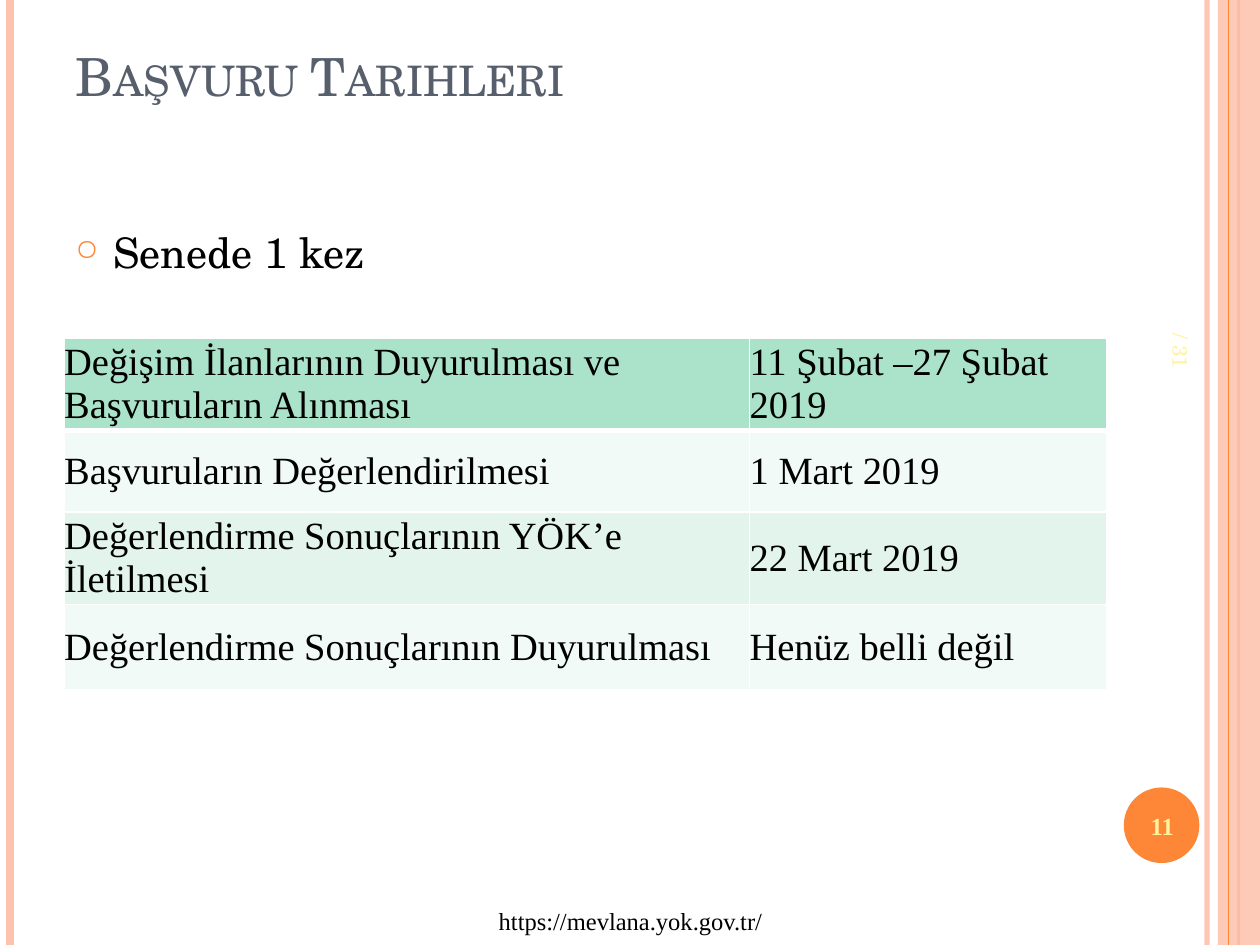
from lxml import etree
from pptx import Presentation
from pptx.dml.color import RGBColor
from pptx.enum import shapes as sh, text as tx
from pptx.oxml import ns
from pptx.util import Pt

SERIF, SCHOLA = "Times New Roman", "TeX Gyre Schola"
PEACH, ORANGE, CREAM, BLACK = "FEC3AE", "FE8637", "FFF39D", "000000"


def rgb(code):
    return RGBColor.from_string(code)


def style(frame, size, face, code, bold=False):
    for par in frame.paragraphs:
        for run in par.runs:
            run.font.size = Pt(size)
            run.font.name = face
            run.font.bold = bold
            run.font.color.rgb = rgb(code)


deck = Presentation()
deck.slide_width, deck.slide_height = Pt(720), Pt(540)
slide = deck.slides.add_slide(deck.slide_layouts[5])
items = slide.shapes

for x, code, width in [(689.8, PEACH, 3), (5.8, PEACH, 4.5), (707.8, ORANGE, 1.5), (702, ORANGE, 0.75)]:
    if x == 702:
        band = items.add_shape(sh.MSO_SHAPE.RECTANGLE, Pt(696), 0, Pt(24), Pt(540))
    line = items.add_connector(sh.MSO_CONNECTOR.STRAIGHT, Pt(x), 0, Pt(x), Pt(540))
    line.line.color.rgb = rgb(code)
    line.line.width = Pt(width)
    etree.SubElement(line._element.spPr, ns.qn("a:effectLst"))
    if width == 3:
        tint = line._element.spPr.find(".//" + ns.qn("a:srgbClr"))
        etree.SubElement(tint, ns.qn("a:alpha"), val="93000")

disc = items.add_shape(sh.MSO_SHAPE.OVAL, Pt(642.2), Pt(450), Pt(43.2), Pt(43.2))
for shape, code in [(band, PEACH), (disc, ORANGE)]:
    shape.shadow.inherit = False
    shape.fill.solid()
    shape.fill.fore_color.rgb = rgb(code)
    shape.line.fill.background()
tint = band._element.spPr.find(".//" + ns.qn("a:srgbClr"))
etree.SubElement(tint, ns.qn("a:alpha"), val="87000")

title = items.title
title.left, title.top, title.width, title.height = Pt(36), Pt(21.6), Pt(588), Pt(90)
frame = title.text_frame
frame.text = "Başvuru Tarihleri"
frame.auto_size = tx.MSO_AUTO_SIZE.NONE
frame.vertical_anchor = tx.MSO_ANCHOR.TOP
frame.paragraphs[0].alignment = tx.PP_ALIGN.LEFT
style(frame, 30, SCHOLA, "575F6D")
frame.paragraphs[0].runs[0].font._element.set("cap", "small")

body = items.add_textbox(Pt(36), Pt(126), Pt(588), Pt(383.8))
frame = body.text_frame
frame.word_wrap = True
frame.text = "Senede 1 kez"
style(frame, 24, SCHOLA, BLACK)
par = frame.paragraphs[0]
par.space_before = Pt(6)
props = par._p.get_or_add_pPr()
props.set("marL", str(Pt(21.6)))
props.set("indent", str(Pt(-21.6)))
tint = etree.SubElement(props, ns.qn("a:buClr"))
etree.SubElement(tint, ns.qn("a:srgbClr"), val=ORANGE)
etree.SubElement(props, ns.qn("a:buSzPct"), val="70000")
etree.SubElement(props, ns.qn("a:buChar"), char="○")

notes = [
    ("11", 640.1, 451.4, 48.2, 41, 14, SERIF, CREAM, True, 0),
    ("https://mevlana.yok.gov.tr/", 277.2, 514.1, 166.3, 24.5, 14, SERIF, BLACK, False, 0),
    ("/ 31", 644.8, 188.6, 60, 24, 12, SCHOLA, CREAM, False, 90),
]
for words, x, y, wide, high, size, face, code, bold, turn in notes:
    box = items.add_textbox(Pt(x), Pt(y), Pt(wide), Pt(high))
    box.rotation = turn
    frame = box.text_frame
    frame.word_wrap = wide < 100
    frame.vertical_anchor = tx.MSO_ANCHOR.MIDDLE
    frame.text = words
    frame.paragraphs[0].alignment = tx.PP_ALIGN.CENTER
    style(frame, size, face, code, bold)

rows = [
    ("Değişim İlanlarının Duyurulması ve Başvuruların Alınması", "11 Şubat –27 Şubat 2019", 52.6, "AAE2CA"),
    ("Başvuruların Değerlendirilmesi", "1 Mart 2019", 46.8, "F1FAF6"),
    ("Değerlendirme Sonuçlarının YÖK’e İletilmesi", "22 Mart 2019", 49, "E2F4EC"),
    ("Değerlendirme Sonuçlarının Duyurulması", "Henüz belli değil", 49, "F1FAF6"),
]
grid = items.add_table(len(rows), 2, Pt(36.7), Pt(193), Pt(595.5), Pt(197.4)).table
grid.columns[0].width, grid.columns[1].width = Pt(391.7), Pt(203.8)
for r, (task, date, high, code) in enumerate(rows):
    grid.rows[r].height = Pt(high)
    for c, words in enumerate((task, date)):
        cell = grid.cell(r, c)
        cell.text = words
        cell.vertical_anchor = tx.MSO_ANCHOR.MIDDLE
        cell.margin_left = cell.margin_right = cell.margin_top = cell.margin_bottom = 0
        style(cell.text_frame, 22, SERIF, BLACK)
        props = cell._tc.get_or_add_tcPr()
        for side in ("lnL", "lnR", "lnT", "lnB"):
            thick = 3 if (r, side) in ((0, "lnB"), (1, "lnT")) else 1
            edge = etree.SubElement(props, ns.qn("a:" + side), w=str(Pt(thick)))
            fill = etree.SubElement(edge, ns.qn("a:solidFill"))
            etree.SubElement(fill, ns.qn("a:srgbClr"), val="FFFFFF")
        cell.fill.solid()
        cell.fill.fore_color.rgb = rgb(code)

deck.save("out.pptx")
